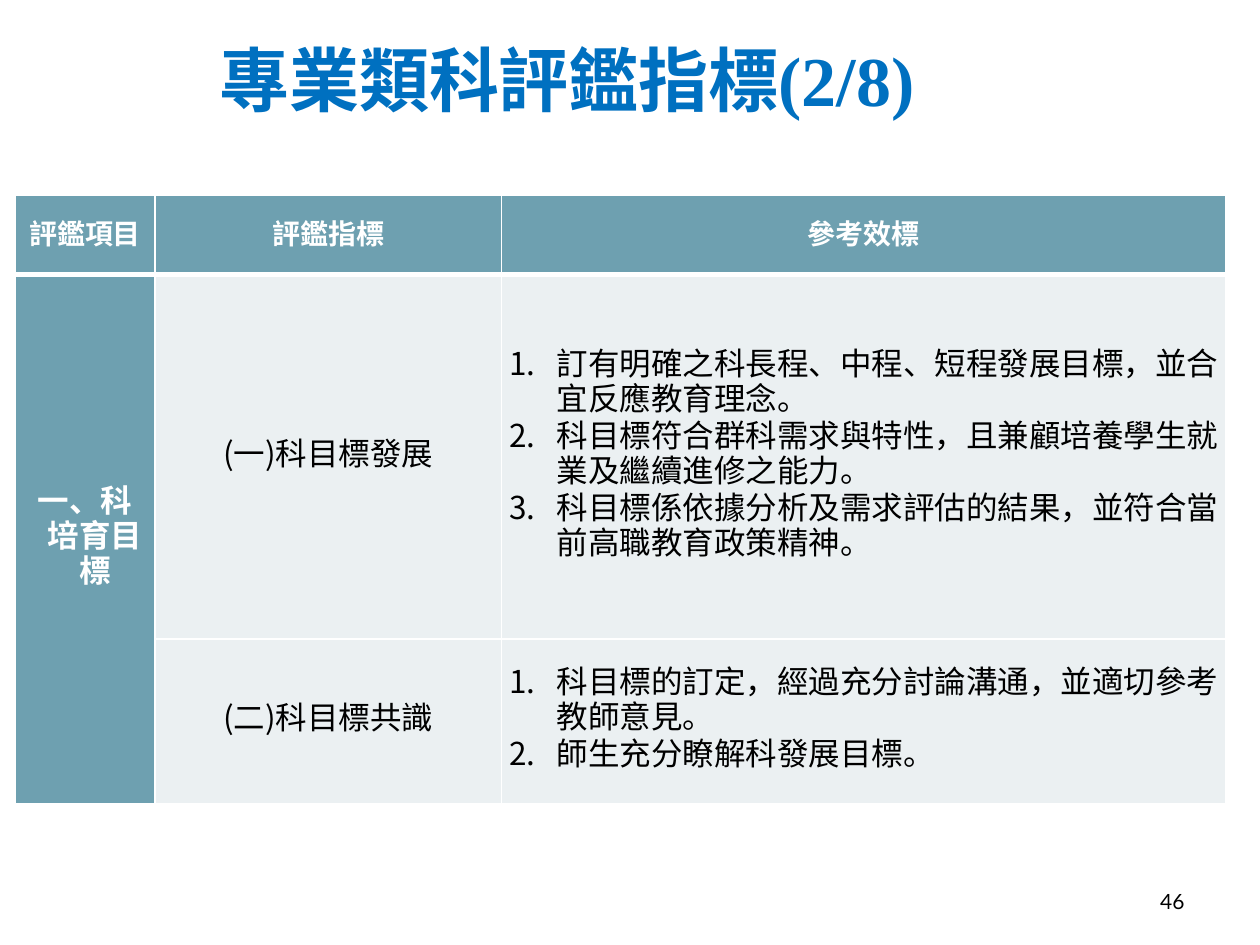
from dataclasses import dataclass

import lxml.etree
import pptx
import pptx.dml.color
import pptx.enum.text
import pptx.oxml.ns
import pptx.util
from pptx.util import Inches

ALIGN = pptx.enum.text.PP_ALIGN
MIDDLE = pptx.enum.text.MSO_ANCHOR.MIDDLE


@dataclass(frozen=True)
class Theme:
    """Colours, fonts and type sizes of the slide."""

    title: str = "0070C0"
    accent: str = "6EA0B0"
    pale: str = "EBF0F2"
    white: str = "FFFFFF"
    black: str = "000000"
    title_font: str = "Times New Roman"
    body_font: str = "Noto Sans CJK SC"
    number_font: str = "Lato"
    title_size: int = 40
    body_size: int = 18
    header_size: int = 16
    number_size: int = 12


THEME = Theme()
HEADERS = ["評鑑項目", "評鑑指標", "參考效標"]
CATEGORY = "一、科培育目標"
INDICATORS = [
    ("(一)科目標發展", [
        "訂有明確之科長程、中程、短程發展目標，並合宜反應教育理念。",
        "科目標符合群科需求與特性，且兼顧培養學生就業及繼續進修之能力。",
        "科目標係依據分析及需求評估的結果，並符合當前高職教育政策精神。",
    ]),
    ("(二)科目標共識", [
        "科目標的訂定，經過充分討論溝通，並適切參考教師意見。",
        "師生充分瞭解科發展目標。",
    ]),
]


def add_element(parent, tag, **attributes):
    """Append a DrawingML element to a parent and return it."""
    return lxml.etree.SubElement(parent, pptx.oxml.ns.qn(tag), **attributes)


def set_font(para, name, size, color, bold=False):
    """Set the font of a whole paragraph."""
    para.font.name = name
    para.font.size = pptx.util.Pt(size)
    para.font.bold = bold
    para.font.color.rgb = pptx.dml.color.RGBColor.from_string(color)


def add_label(page, box, text, align, *font):
    """Place one vertically centred line of text in a box."""
    frame = page.shapes.add_textbox(*map(Inches, box)).text_frame
    frame.word_wrap = True
    frame.vertical_anchor = MIDDLE
    para = frame.paragraphs[0]
    para.text = text
    para.alignment = align
    set_font(para, *font)


def style_cell(cell, fill, bottom=1):
    """Give a table cell its margins, white borders and fill."""
    cell.vertical_anchor = MIDDLE
    cell.margin_left = cell.margin_right = Inches(0.06)
    cell.margin_top = cell.margin_bottom = 0
    properties = cell._tc.get_or_add_tcPr()
    for side, width in (("L", 1), ("R", 1), ("T", 1), ("B", bottom)):
        line = add_element(properties, f"a:ln{side}", w=str(pptx.util.Pt(width)))
        add_element(add_element(line, "a:solidFill"), "a:srgbClr", val=THEME.white)
    cell.fill.solid()
    cell.fill.fore_color.rgb = pptx.dml.color.RGBColor.from_string(fill)


def write_cell(cell, lines, size, color, bold=False, indent=0, numbered=False):
    """Write paragraphs into a cell, centred or as a numbered list."""
    cell.text = "\n".join(lines)
    for index, para in enumerate(cell.text_frame.paragraphs):
        para.alignment = ALIGN.LEFT if numbered else ALIGN.CENTER
        para.line_spacing = pptx.util.Pt(20)
        para.space_before = pptx.util.Pt(0.5 if index else 0)
        para.space_after = pptx.util.Pt(0.5)
        properties = para._p.get_or_add_pPr()
        properties.set("marL", str(Inches(indent)))
        properties.set("indent", str(Inches(-indent)))
        if numbered:
            add_element(properties, "a:buFont", typeface=THEME.body_font)
            add_element(properties, "a:buAutoNum", type="arabicPeriod")
        set_font(para, THEME.body_font, size, color, bold)


def add_indicator_table(page, box):
    """Place the table of indicators in a box."""
    widths, heights = [1.11, 2.75, 5.75], [0.63, 2.89, 1.31]
    table = page.shapes.add_table(len(heights), len(widths), *map(Inches, box)).table
    table.horz_banding = False
    for column, width in zip(table.columns, widths):
        column.width = Inches(width)
    for row, height in zip(table.rows, heights):
        row.height = Inches(height)

    for column, header in enumerate(HEADERS):
        cell = table.cell(0, column)
        style_cell(cell, THEME.accent, bottom=3)
        indent = 0 if column == 1 else 0.16
        write_cell(cell, [header], THEME.header_size, THEME.white, True, indent)

    for row, (indicator, criteria) in enumerate(INDICATORS, start=1):
        for column, fill in enumerate([THEME.accent, THEME.pale, THEME.pale]):
            style_cell(table.cell(row, column), fill)
        write_cell(table.cell(row, 1), [indicator], THEME.body_size, THEME.black)
        write_cell(table.cell(row, 2), criteria, THEME.body_size, THEME.black,
                   indent=0.38, numbered=True)

    category = table.cell(1, 0)
    category.merge(table.cell(len(INDICATORS), 0))
    write_cell(category, [CATEGORY], THEME.body_size, THEME.white, True, 0.16)
    category._tc.get_or_add_tcPr().set("vert", "eaVert")


def main():
    """Build the slide and save the deck."""
    deck = pptx.Presentation()
    deck.slide_width, deck.slide_height = Inches(10), Inches(7.5)
    page = deck.slides.add_slide(deck.slide_layouts[6])
    add_label(page, (0, 0, 9, 1.25), "專業類科評鑑指標(2/8)", ALIGN.CENTER,
              THEME.title_font, THEME.title_size, THEME.title, True)
    add_indicator_table(page, (0.12, 1.55, 9.61, 4.83))
    add_label(page, (7.17, 6.95, 2.33, 0.4), "46", ALIGN.RIGHT,
              THEME.number_font, THEME.number_size, THEME.black)
    deck.save("out.pptx")


if __name__ == "__main__":
    main()
